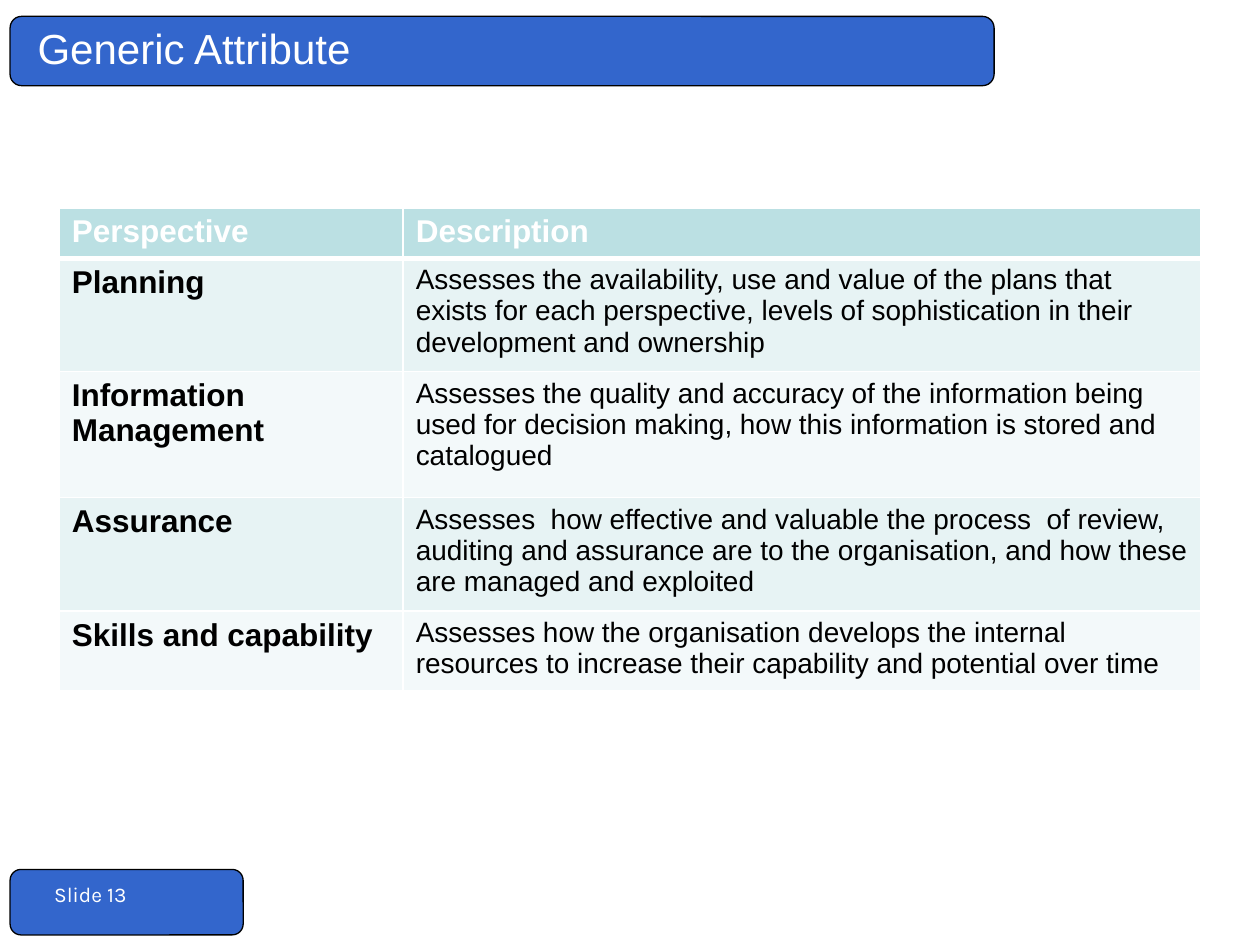
from lxml.etree import SubElement
from pptx import Presentation
from pptx.dml.color import RGBColor
from pptx.enum.shapes import MSO_SHAPE
from pptx.enum.text import MSO_ANCHOR
from pptx.oxml.ns import qn
from pptx.util import Inches, Pt

WHITE, BLACK, BLUE = "FFFFFF", "000000", "3366CC"
HEADER_FILL, BAND_FILLS = "BBE0E3", ("E7F3F4", "F3F9FA")

TITLE = "Generic Attribute"
FOOTER = "Slide 13"
HEADINGS = ("Perspective", "Description")
PERSPECTIVES = [
    ("Planning",
     "Assesses the availability, use and value of the plans that exists for each "
     "perspective, levels of sophistication in their development and ownership"),
    ("Information Management",
     "Assesses the quality and accuracy of the information being used for decision "
     "making, how this information is stored and catalogued"),
    ("Assurance",
     "Assesses  how effective and valuable the process  of review, auditing and "
     "assurance are to the organisation, and how these are managed and exploited"),
    ("Skills and capability",
     "Assesses how the organisation develops the internal resources to increase "
     "their capability and potential over time"),
]
TABLE_LEFT, TABLE_TOP = 0.47, 1.65
COLUMN_WIDTHS = (2.73, 6.33)
ROW_HEIGHTS = (0.4, 0.9, 1.0, 0.9, 0.63)


def color(value):
    return RGBColor.from_string(value)


def inches(*lengths):
    return [Inches(length) for length in lengths]


def write(frame, text, size, ink, font="Arial", bold=False):
    run = frame.paragraphs[0].add_run()
    run.text = text
    run.font.name, run.font.size, run.font.bold = font, Pt(size), bold
    run.font.color.rgb = color(ink)


def add_bar(slide, box):
    bar = slide.shapes.add_shape(MSO_SHAPE.ROUNDED_RECTANGLE, *inches(*box))
    bar.shadow.inherit = False
    bar.fill.solid()
    bar.fill.fore_color.rgb = color(BLUE)
    bar.line.color.rgb = color(BLACK)
    bar.line.width = Pt(0.75)


def add_label(slide, box):
    frame = slide.shapes.add_textbox(*inches(*box)).text_frame
    frame.word_wrap = True
    return frame


def set_borders(cell, top, bottom):
    properties = cell._tc.get_or_add_tcPr()
    widths = {"a:lnL": 1, "a:lnR": 1, "a:lnT": top, "a:lnB": bottom}
    for side, width in widths.items():
        line = SubElement(properties, qn(side), w=str(Pt(width)))
        fill = SubElement(line, qn("a:solidFill"))
        SubElement(fill, qn("a:srgbClr"), val=WHITE)


def fill_cell(cell, row, column, text):
    # Borders come before the fill in the cell properties
    set_borders(cell, 3 if row == 1 else 1, 3 if row == 0 else 1)
    cell.fill.solid()
    cell.fill.fore_color.rgb = color(BAND_FILLS[(row - 1) % 2] if row else HEADER_FILL)
    is_description = row > 0 and column == 1
    write(cell.text_frame, text, 16 if is_description else 18,
          BLACK if row else WHITE, bold=not is_description)


def main():
    deck = Presentation()
    deck.slide_width, deck.slide_height = inches(10, 7.5)
    slide = deck.slides.add_slide(deck.slide_layouts[6])

    # Title and footer bars
    add_bar(slide, (0.08, 0.13, 7.81, 0.55))
    add_bar(slide, (0.08, 6.9, 1.85, 0.52))

    # Footer text
    footer = add_label(slide, (0, 6.9, 1.38, 0.37))
    footer.margin_left, footer.margin_top = inches(0.43, 0.1)
    write(footer, FOOTER, 12, WHITE, "Karla")

    # Perspectives table
    rows = [HEADINGS, *PERSPECTIVES]
    table = slide.shapes.add_table(
        len(rows), len(HEADINGS),
        *inches(TABLE_LEFT, TABLE_TOP, sum(COLUMN_WIDTHS), sum(ROW_HEIGHTS))).table
    for column, width in zip(table.columns, COLUMN_WIDTHS):
        column.width = Inches(width)
    for r, (texts, height) in enumerate(zip(rows, ROW_HEIGHTS)):
        table.rows[r].height = Inches(height)
        for c, text in enumerate(texts):
            fill_cell(table.cell(r, c), r, c, text)

    # Title text
    title = add_label(slide, (0.2, 0, 7.62, 0.76))
    title.vertical_anchor = MSO_ANCHOR.MIDDLE
    write(title, TITLE, 24, WHITE)

    deck.save("out.pptx")


if __name__ == "__main__":
    main()
